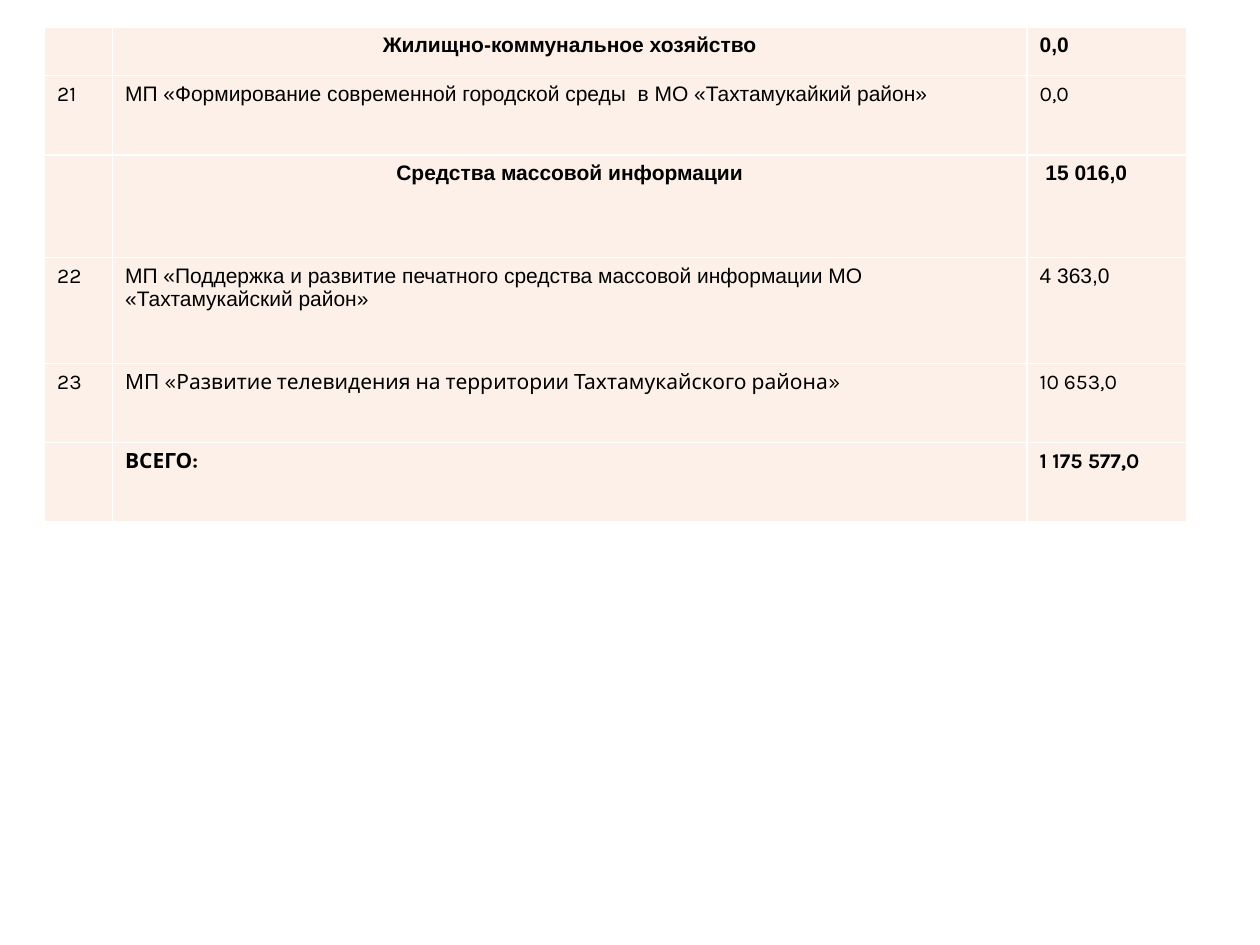
from lxml import etree
from pptx import Presentation
from pptx import util as u
from pptx.dml.color import RGBColor
from pptx.enum import text
from pptx.oxml import ns


class Theme:
    ink = RGBColor.from_string("000000")
    fill = RGBColor.from_string("FCF0E8")
    edge = "FFFFFF"
    size = 12
    line = 1
    sans = "Arial"
    alt = "Karla"


class Deck:
    def __init__(self, theme, wide, high):
        self.theme = theme
        self.prs = Presentation()
        self.prs.slide_width, self.prs.slide_height = u.Pt(wide), u.Pt(high)
        self.slide = self.prs.slides.add_slide(self.prs.slide_layouts[6])

    def table(self, left, top, cols, rows):
        frame = self.slide.shapes.add_table(
            len(rows), len(cols), u.Pt(left), u.Pt(top),
            u.Pt(sum(cols)), u.Pt(sum(rows)))
        grid = frame.table
        grid.first_row = grid.horz_banding = False
        for col, wide in zip(grid.columns, cols):
            col.width = u.Pt(wide)
        for row, high in zip(grid.rows, rows):
            row.height = u.Pt(high)
        return grid

    def cell(self, cell, words, face, bold=False, mid=False):
        self.edges(cell)
        cell.fill.solid()
        cell.fill.fore_color.rgb = self.theme.fill
        para = cell.text_frame.paragraphs[0]
        if not words:
            # An empty cell keeps the body size so its row does not grow
            etree.SubElement(para._p, ns.qn("a:endParaRPr"),
                             sz=str(self.theme.size * 100))
            return
        para.alignment = text.PP_ALIGN.CENTER if mid else text.PP_ALIGN.LEFT
        run = para.add_run()
        run.text = words
        form = {"name": face, "size": u.Pt(self.theme.size), "bold": bold}
        for key, value in form.items():
            setattr(run.font, key, value)
        run.font.color.rgb = self.theme.ink

    def edges(self, cell):
        props = cell._tc.get_or_add_tcPr()
        for side in ("L", "R", "T", "B"):
            line = etree.SubElement(props, ns.qn(f"a:ln{side}"),
                                    w=str(u.Pt(self.theme.line)))
            paint = etree.SubElement(line, ns.qn("a:solidFill"))
            etree.SubElement(paint, ns.qn("a:srgbClr"), val=self.theme.edge)

    def save(self):
        self.prs.save("out.pptx")


def main():
    theme = Theme()
    sans, alt = theme.sans, theme.alt
    deck = Deck(theme, 720, 540)

    # Rows: height, number, title, sum, title font, sum font, bold, centred
    rows = [
        (28, "", "Жилищно-коммунальное хозяйство", "0,0",
         sans, sans, True, True),
        (45.2, "21", "МП «Формирование современной городской среды  в МО "
         "«Тахтамукайкий район»", "0,0", sans, alt, False, False),
        (58.8, "", "Средства массовой информации", " 15 016,0",
         sans, sans, True, True),
        (60.5, "22", "МП «Поддержка и развитие печатного средства массовой "
         "информации МО «Тахтамукайский район»", "4 363,0",
         sans, sans, False, False),
        (45.2, "23", "МП «Развитие телевидения на территории "
         "Тахтамукайского района»", "10 653,0", alt, alt, False, False),
        (45.2, "", "ВСЕГО:", "1 175 577,0", alt, alt, True, False),
    ]

    # Programme table
    grid = deck.table(25.5, 15.3, [38.8, 522.6, 91.2], [r[0] for r in rows])
    for i, (_, num, title, total, face, sumface, bold, mid) in enumerate(rows):
        deck.cell(grid.cell(i, 0), num, alt)
        deck.cell(grid.cell(i, 1), title, face, bold, mid)
        deck.cell(grid.cell(i, 2), total, sumface, bold)

    deck.save()


if __name__ == "__main__":
    main()
